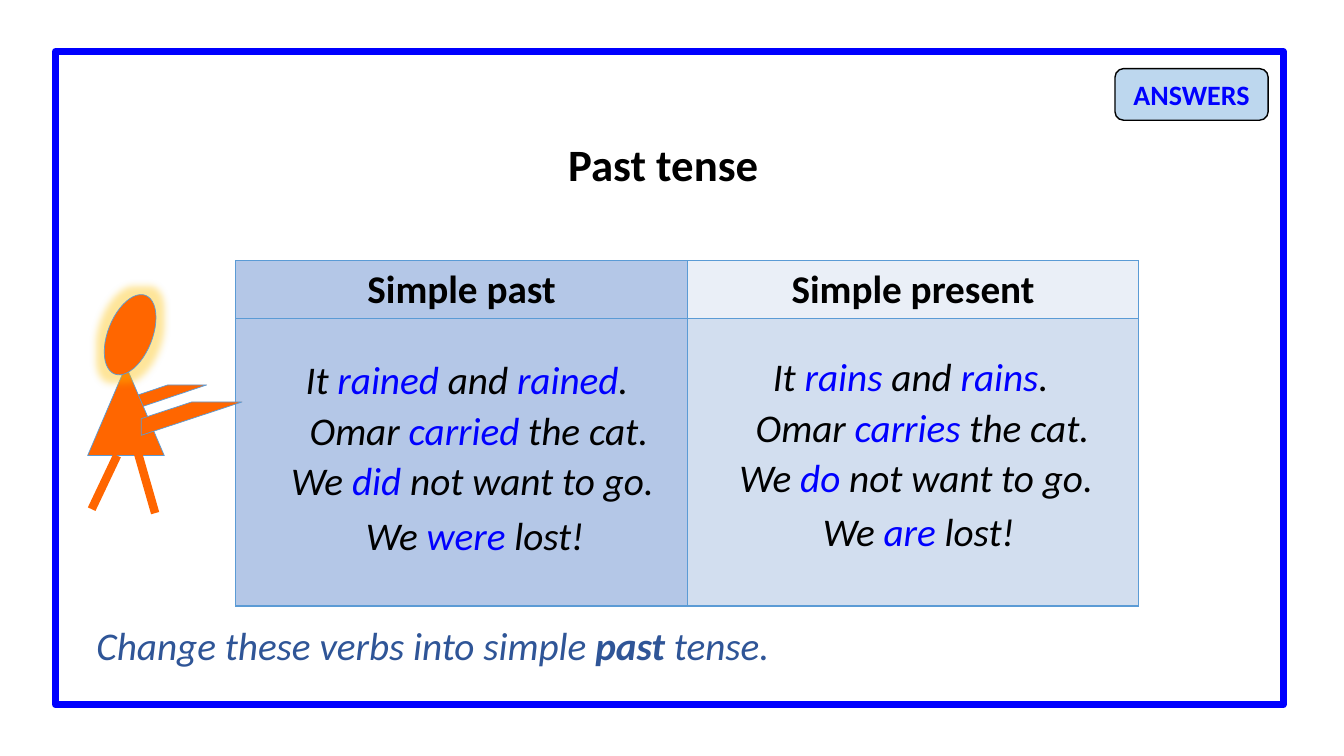
from lxml.etree import SubElement
from pptx import Presentation
from pptx.dml.color import RGBColor
from pptx.enum.shapes import MSO_CONNECTOR, MSO_SHAPE
from pptx.enum.text import MSO_ANCHOR, MSO_AUTO_SIZE, PP_ALIGN
from pptx.oxml import parse_xml
from pptx.oxml.ns import nsdecls, qn
from pptx.util import Cm, Pt

BLACK = RGBColor(0x00, 0x00, 0x00)
BLUE = RGBColor(0x00, 0x00, 0xFF)
NAVY = RGBColor(0x2F, 0x55, 0x97)
LINE_BLUE = RGBColor(0x5B, 0x9B, 0xD5)
BUTTON_BLUE = RGBColor(0xBD, 0xD7, 0xEE)
PAST_FILL = RGBColor(0xB4, 0xC7, 0xE7)
HEAD_FILL = RGBColor(0xEA, 0xEF, 0xF7)
BODY_FILL = RGBColor(0xD2, 0xDE, 0xEF)
ORANGE = RGBColor(0xFF, 0x66, 0x00)
GLOW = RGBColor(0xFF, 0xC0, 0x00)

# Verbs to highlight stand between asterisks.
PAST = ["It *rained* and *rained*.", "Omar *carried* the cat.",
        "We *did* not want to go. ", "We *were* lost!"]
PRESENT = ["It *rains* and *rains*.", "Omar *carries* the cat.",
           "We *do* not want to go. ", "We *are* lost!"]
SENTENCE_SPOTS = [(17.45, 8.76), (17.75, 10.03), (17.7, 11.3), (17.65, 12.67)]


class TenseSlide:
    font = "Calibri"
    size = 28

    def __init__(self, prs):
        self.slide = prs.slides.add_slide(prs.slide_layouts[5])
        self.shapes = self.slide.shapes

    def run(self, p, text, color=BLACK, size=None, bold=False, italic=False):
        r = p.add_run()
        r.text = text
        r.font.name = self.font
        r.font.size = Pt(size or self.size)
        r.font.bold = bold
        r.font.italic = italic
        r.font.color.rgb = color

    def title(self, text, left, top, width, height):
        sp = self.shapes.title
        sp.left, sp.top, sp.width, sp.height = map(Cm, (left, top, width, height))
        tf = sp.text_frame
        tf.vertical_anchor = MSO_ANCHOR.TOP
        tf.auto_size = MSO_AUTO_SIZE.NONE
        p = tf.paragraphs[0]
        p.alignment = PP_ALIGN.CENTER
        self.run(p, text, size=32, bold=True)
        self.run(p, " ", size=36, bold=True)

    def text_line(self, left, top, width, align=PP_ALIGN.LEFT):
        sp = self.shapes.add_textbox(Cm(left), Cm(top), Cm(width), Cm(1.45))
        tf = sp.text_frame
        tf.word_wrap = True
        tf.auto_size = MSO_AUTO_SIZE.SHAPE_TO_FIT_TEXT
        p = tf.paragraphs[0]
        p.alignment = align
        return p

    def sentence(self, text, left, top):
        p = self.text_line(left, top, 11, PP_ALIGN.CENTER)
        for i, part in enumerate(text.split("*")):
            self.run(p, part, BLUE if i % 2 else BLACK, italic=True)

    def shape(self, kind, left, top, width, height, fill=None,
              line=LINE_BLUE, weight=0.5, parent=None):
        shapes = parent.shapes if parent else self.shapes
        sp = shapes.add_shape(kind, Cm(left), Cm(top), Cm(width), Cm(height))
        sp.shadow.inherit = False
        if fill is None:
            sp.fill.background()
        else:
            sp.fill.solid()
            sp.fill.fore_color.rgb = fill
        sp.line.color.rgb = line
        sp.line.width = Pt(weight)
        return sp

    def button(self, text, left, top, width, height):
        sp = self.shape(MSO_SHAPE.ROUNDED_RECTANGLE, left, top, width, height,
                        BUTTON_BLUE, BLACK, 1)
        tf = sp.text_frame
        tf.vertical_anchor = MSO_ANCHOR.MIDDLE
        p = tf.paragraphs[0]
        p.alignment = PP_ALIGN.CENTER
        self.run(p, text, BLUE, 20, bold=True)

    def cell(self, cell, text, fill):
        cell.fill.solid()
        cell.fill.fore_color.rgb = fill
        tc_pr = cell._tc.get_or_add_tcPr()
        for i, side in enumerate(("lnL", "lnR", "lnT", "lnB")):
            tc_pr.insert(i, parse_xml(
                f'<a:{side} {nsdecls("a")} w="12700"><a:solidFill>'
                f'<a:srgbClr val="{LINE_BLUE}"/></a:solidFill></a:{side}>'))
        if text:
            p = cell.text_frame.paragraphs[0]
            p.alignment = PP_ALIGN.CENTER
            self.run(p, text, bold=True)

    def table(self, left, top, col_width, row_heights, headings, fills):
        table = self.shapes.add_table(
            len(row_heights), len(headings), Cm(left), Cm(top),
            Cm(col_width * len(headings)), Cm(sum(row_heights))).table
        for col in table.columns:
            col.width = Cm(col_width)
        for r, height in enumerate(row_heights):
            table.rows[r].height = Cm(height)
            for c, heading in enumerate(headings):
                self.cell(table.cell(r, c), "" if r else heading, fills[r][c])

    def limb(self, parent, x1, y1, x2, y2):
        line = parent.shapes.add_connector(
            MSO_CONNECTOR.STRAIGHT, Cm(x1), Cm(y1), Cm(x2), Cm(y2))
        line.line.color.rgb = ORANGE
        line.line.width = Pt(6)
        SubElement(line._element.spPr, qn("a:effectLst"))

    def glow(self, sp, radius):
        effects = sp._element.spPr.find(qn("a:effectLst"))
        effects.append(parse_xml(
            f'<a:glow {nsdecls("a")} rad="{Pt(radius)}"><a:srgbClr val="{GLOW}">'
            '<a:alpha val="40000"/></a:srgbClr></a:glow>'))

    def stick_figure(self):
        figure = self.shapes.add_group_shape()
        self.shape(MSO_SHAPE.DIAGONAL_STRIPE, 3.25, 9.7, 1.96, 0.66, ORANGE,
                   parent=figure)
        self.shape(MSO_SHAPE.ISOSCELES_TRIANGLE, 2.21, 9.22, 1.93, 2.26, ORANGE,
                   parent=figure)
        head = self.shape(MSO_SHAPE.OVAL, 2.72, 7.37, 1.12, 2.13, ORANGE,
                          parent=figure)
        head.rotation = 21.6
        self.glow(head, 11)
        self.shape(MSO_SHAPE.DIAGONAL_STRIPE, 3.56, 10.13, 2.54, 0.84, ORANGE,
                   parent=figure)
        self.limb(figure, 2.95, 11.48, 2.31, 12.83)
        self.limb(figure, 3.48, 11.43, 3.91, 12.93)


def main():
    prs = Presentation()
    prs.slide_width, prs.slide_height = Cm(33.87), Cm(19.05)
    s = TenseSlide(prs)
    s.shape(MSO_SHAPE.RECTANGLE, 1.4, 1.3, 30.94, 16.46, line=BLUE, weight=5)
    s.title("Past tense", 2.18, 3.18, 29.36, 1.8)

    p = s.text_line(2.18, 15.52, 29.36)
    for text, bold in (("Change these verbs into simple ", False),
                       ("past ", True), ("tense.", False)):
        s.run(p, text, NAVY, bold=bold, italic=True)

    s.table(5.94, 6.57, 11.38, (1.46, 7.24), ("Simple past", "Simple present"),
            ((PAST_FILL, HEAD_FILL), (PAST_FILL, BODY_FILL)))
    for sentences, dx, dy in ((PRESENT, 0, 0), (PAST, -11.18, 0.08)):
        for text, (left, top) in zip(sentences, SENTENCE_SPOTS):
            s.sentence(text, left + dx, top + dy)

    s.button("ANSWERS", 28.1, 1.73, 3.86, 1.3)
    s.stick_figure()
    prs.save("out.pptx")


if __name__ == "__main__":
    main()
